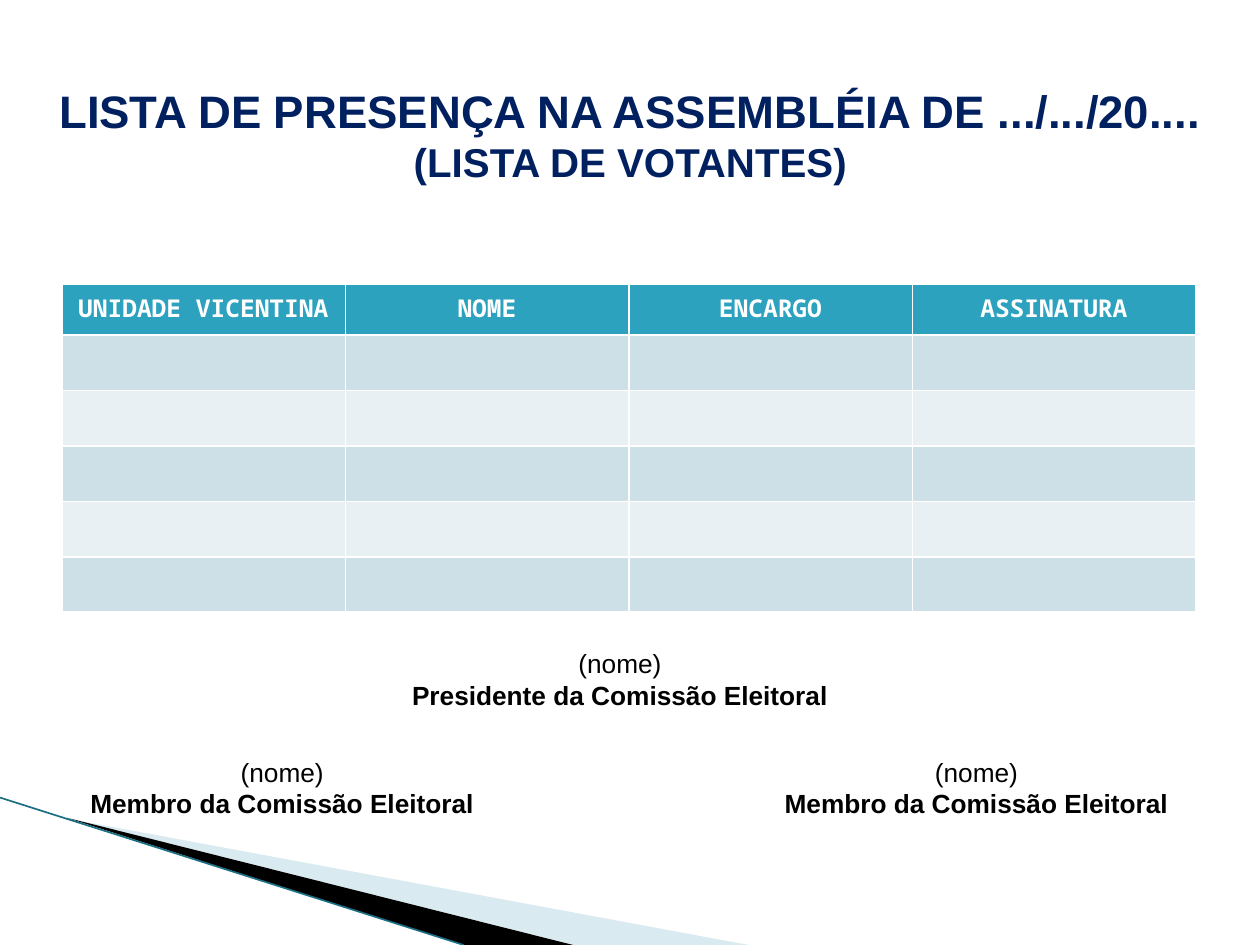
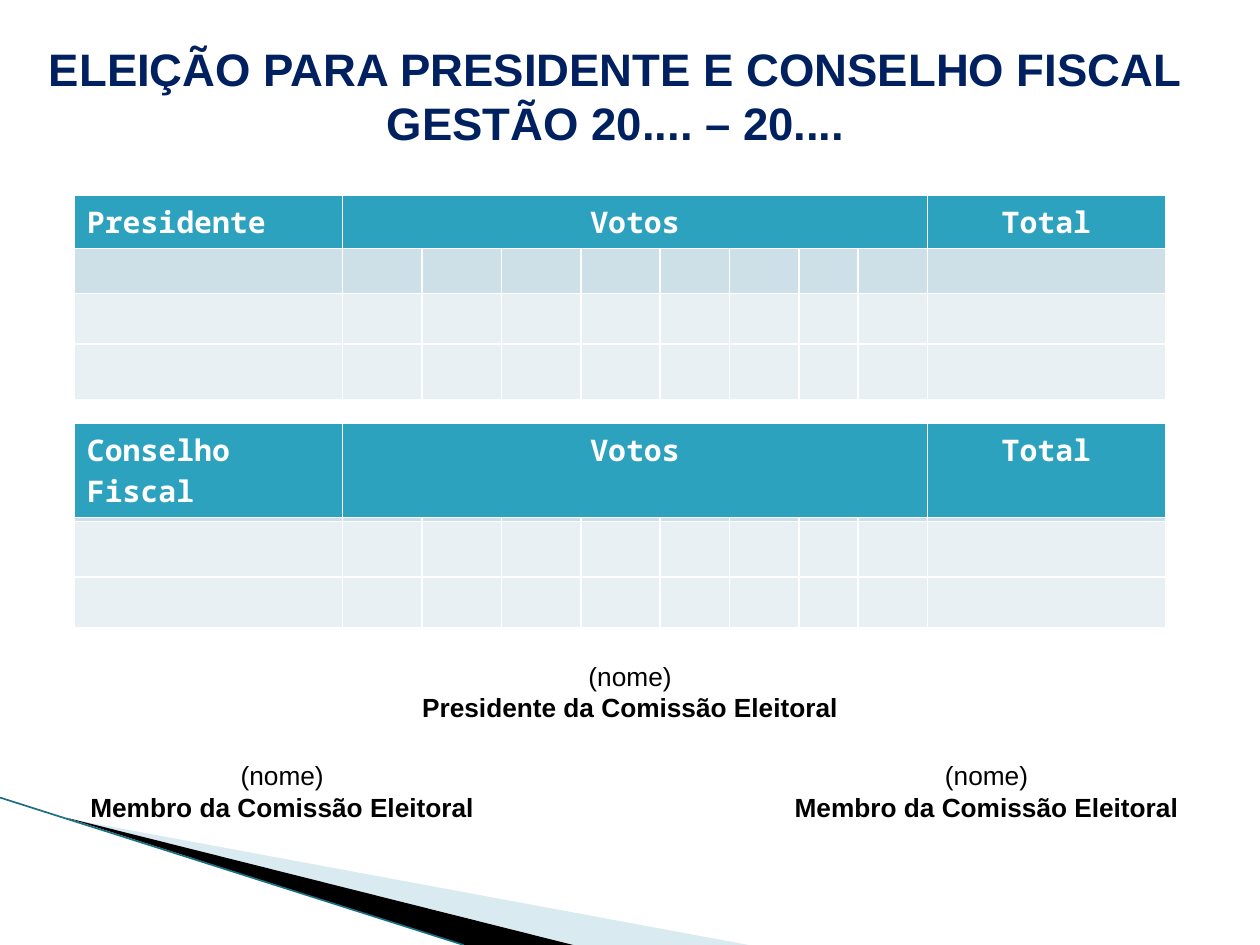
from lxml import etree
from pptx import Presentation
from pptx import util as u
from pptx.dml.color import RGBColor
from pptx.enum import shapes, text
from pptx.oxml import ns

SLIDE_WIDTH, SLIDE_HEIGHT = u.Inches(10), u.Inches(7.5)
GRID_COLUMNS, GRID_ROWS = 100, 75

COLOURS = {
    "title": "002060",
    "body": "000000",
    "header": "2DA2BF",
    "header_text": "FFFFFF",
    "band_dark": "CDE0E8",
    "band_light": "E8F0F4",
    "ray_light": "A0CBDC",
    "ray_dark": "000000",
    "ray_edge": "1A6F82",
}
BODY_FONT, HEADER_FONT = "Arial", "Noto Sans Mono"
LEFT, CENTER = text.PP_ALIGN.LEFT, text.PP_ALIGN.CENTER

BALLOT_LEFT = 5.9
BALLOT_COLUMNS = [21.3] + [6.3] * 4 + [5.5, 5.5, 4.7, 5.5, 18.9]
ROW_HEIGHT = 4.4


def colour(name):
    return RGBColor.from_string(COLOURS[name])


def col(count):
    return u.Emu(round(SLIDE_WIDTH * count / GRID_COLUMNS))


def row(count):
    return u.Emu(round(SLIDE_HEIGHT * count / GRID_ROWS))


def area(left, top, width, height):
    return col(left), row(top), col(width), row(height)


def add_run(paragraph, words, size, ink, bold=False, font=BODY_FONT):
    run = paragraph.add_run()
    run.text = words
    run.font.name = font
    run.font.size = u.Pt(size)
    run.font.bold = bold
    run.font.color.rgb = colour(ink)


def add_ray(slide, corners, fill, opacity=100):
    points = [(col(x), row(y)) for x, y in corners]
    builder = slide.shapes.build_freeform(*points[0])
    builder.add_line_segments(points[1:], close=True)
    ray = builder.convert_to_shape()
    ray.shadow.inherit = False
    ray.line.fill.background()
    ray.fill.solid()
    ray.fill.fore_color.rgb = colour(fill)
    if opacity < 100:
        tint = ray._element.spPr.find(".//" + ns.qn("a:srgbClr"))
        etree.SubElement(tint, ns.qn("a:alpha"), val=str(opacity * 1000))


def add_corner_rays(slide):
    add_ray(slide, [(5.5, 65), (59.4, 75), (45.6, 75)], "ray_light", 40)
    add_ray(slide, [(5.3, 64.9), (45.5, 75), (36.8, 75)], "ray_dark")
    edge = slide.shapes.add_connector(
        shapes.MSO_CONNECTOR.STRAIGHT, col(0), row(63.3), col(36.8), row(75))
    edge.line.color.rgb = colour("ray_edge")
    edge.line.width = u.Pt(0.95)
    etree.SubElement(edge._element.spPr, ns.qn("a:effectLst"))


def add_slide(deck, title_area, title_lines):
    slide = deck.slides.add_slide(deck.slide_layouts[5])
    add_corner_rays(slide)
    title = slide.shapes.title
    title.left, title.top, title.width, title.height = area(*title_area)
    frame = title.text_frame
    frame.auto_size = text.MSO_AUTO_SIZE.NONE
    frame.vertical_anchor = text.MSO_ANCHOR.MIDDLE
    frame.margin_left = frame.margin_right = 0
    heading = frame.paragraphs[0]
    heading.alignment = CENTER
    for index, (words, size) in enumerate(title_lines):
        if index:
            heading.add_line_break()
        add_run(heading, words, size, "title", bold=True)
    return slide


def add_grid(slide, left, top, widths, heights, bands, has_header):
    table = slide.shapes.add_table(
        len(heights), len(widths),
        *area(left, top, sum(widths), sum(heights))).table
    table.first_row = has_header
    for column, width in zip(table.columns, widths):
        column.width = col(width)
    for line, height, band in zip(table.rows, heights, bands):
        line.height = row(height)
        for cell in line.cells:
            cell.fill.solid()
            cell.fill.fore_color.rgb = colour(band)
    return table


def write_header(cell, words, size, alignment=CENTER):
    paragraph = cell.text_frame.paragraphs[0]
    paragraph.alignment = alignment
    add_run(paragraph, words, size, "header_text", bold=True, font=HEADER_FONT)


def add_attendance_list(slide, headings, voters):
    bands = ["header"] + [("band_dark", "band_light")[i % 2] for i in range(voters)]
    table = add_grid(slide, 4.9, 22.6, [22.5] * len(headings),
                     [4] + [ROW_HEIGHT] * voters, bands, True)
    for cell, heading in zip(table.rows[0].cells, headings):
        write_header(cell, heading, 14)


def add_ballot(slide, office, top, header_height, extra_tops):
    table = add_grid(slide, BALLOT_LEFT, top, BALLOT_COLUMNS,
                     [header_height, ROW_HEIGHT], ["header", "band_dark"], True)
    last = len(BALLOT_COLUMNS) - 1
    table.cell(0, 1).merge(table.cell(0, last - 1))
    write_header(table.cell(0, 0), office, 17, LEFT)
    write_header(table.cell(0, 1), "Votos", 17)
    write_header(table.cell(0, last), "Total", 17)
    for extra_top in extra_tops:
        add_grid(slide, BALLOT_LEFT, extra_top, BALLOT_COLUMNS,
                 [ROW_HEIGHT], ["band_light"], False)


def add_signature(slide, left, top, width, role):
    frame = slide.shapes.add_textbox(*area(left, top, width, 6.1)).text_frame
    frame.word_wrap = True
    name_line, role_line = frame.paragraphs[0], frame.add_paragraph()
    name_line.alignment = role_line.alignment = CENTER
    add_run(name_line, "(nome)", 15, "body")
    add_run(role_line, f"{role} da Comissão Eleitoral", 15, "body", bold=True)


def add_signatures(slide, president_at, members_top, right_member_left):
    add_signature(slide, *president_at, 36.2, "Presidente")
    for left in (5.1, right_member_left):
        add_signature(slide, left, members_top, 34.6, "Membro")


def main():
    deck = Presentation()
    deck.slide_width, deck.slide_height = SLIDE_WIDTH, SLIDE_HEIGHT

    attendance = add_slide(deck, (2.8, 4.4, 94.5, 12.5), [
        ("LISTA DE PRESENÇA NA ASSEMBLÉIA DE .../.../20....", 26),
        ("(LISTA DE VOTANTES)", 23)])
    add_attendance_list(
        attendance, ["UNIDADE VICENTINA", "NOME", "ENCARGO", "ASSINATURA"], 5)
    add_signatures(attendance, (31.1, 50.9), 59.5, 60.2)

    election = add_slide(deck, (2.8, 1.3, 92.2, 12.5), [
        ("ELEIÇÃO PARA PRESIDENTE E CONSELHO FISCAL", 26),
        ("GESTÃO 20.... – 20....", 26)])
    add_ballot(election, "Presidente", 15.5, 4.2, [23.3, 27.3])
    add_ballot(election, "Conselho Fiscal", 33.6, 7.4, [45.4, 41.4])
    add_signatures(election, (31.9, 51.9), 59.8, 61)

    deck.save("out.pptx")


if __name__ == "__main__":
    main()
